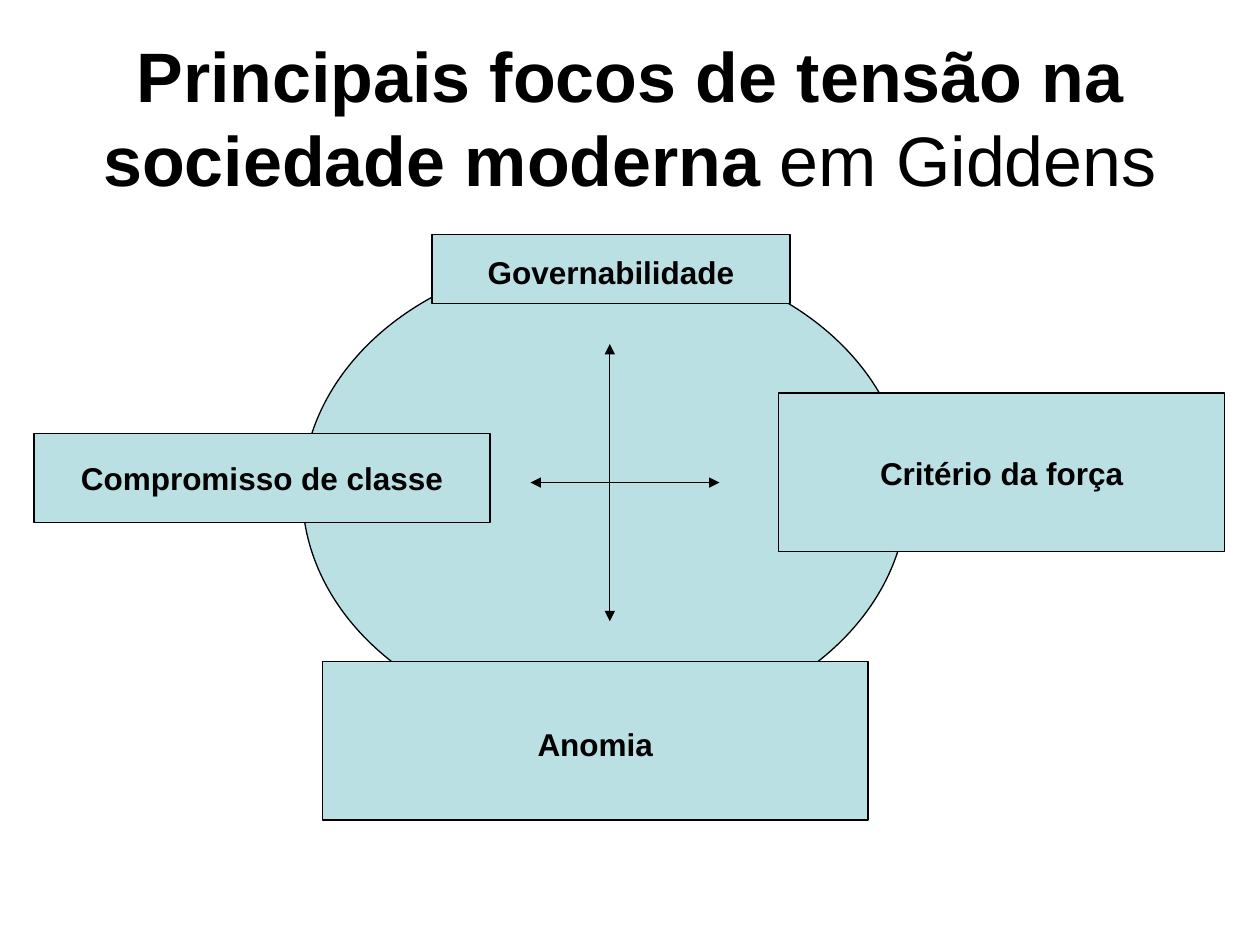
from typing import NamedTuple

import pptx
import pptx.dml.color
import pptx.enum.shapes
import pptx.enum.text
import pptx.oxml.ns
import pptx.util
from lxml import etree
from pptx.util import Inches

BLACK = pptx.dml.color.RGBColor(0x00, 0x00, 0x00)
PALE_TEAL = pptx.dml.color.RGBColor(0xBB, 0xE0, 0xE3)
FONT = "Arial"
OUTLINE = pptx.util.Pt(0.75)
SHAPES = pptx.enum.shapes.MSO_SHAPE


class Tension(NamedTuple):
    label: str
    left: float
    top: float
    width: float
    height: float
    drop: float = 0  # extra top inset that lowers the label


TENSIONS = [
    Tension("Anomia", 2.56, 5.25, 4.33, 1.26, 0.05),
    Tension("Compromisso de classe", 0.27, 3.44, 3.62, 0.71),
    Tension("Governabilidade", 3.43, 1.86, 2.84, 0.55, 0.05),
    Tension("Critério da força", 6.18, 3.12, 3.54, 1.26),
]
HUB = (4.84, 3.83)
ARROW_TIPS = [(4.84, 4.93), (4.84, 2.73), (5.71, 3.83), (4.21, 3.83)]


def add_run(paragraph, text: str, size: float, bold: bool) -> None:
    run = paragraph.add_run()
    run.text = text
    run.font.name = FONT
    run.font.size = pptx.util.Pt(size)
    run.font.bold = bold
    run.font.color.rgb = BLACK


def center_text(frame, wrap: bool):
    frame.word_wrap = wrap
    frame.vertical_anchor = pptx.enum.text.MSO_ANCHOR.MIDDLE
    paragraph = frame.paragraphs[0]
    paragraph.alignment = pptx.enum.text.PP_ALIGN.CENTER
    return paragraph


def add_outlined(slide, kind, left: float, top: float, width: float, height: float):
    shape = slide.shapes.add_shape(
        kind, Inches(left), Inches(top), Inches(width), Inches(height))
    shape.shadow.inherit = False
    shape.fill.solid()
    shape.fill.fore_color.rgb = PALE_TEAL
    shape.line.color.rgb = BLACK
    shape.line.width = OUTLINE
    return shape


def add_tension(slide, tension: Tension) -> None:
    box = add_outlined(slide, SHAPES.RECTANGLE, tension.left, tension.top,
                       tension.width, tension.height)
    box.text_frame.margin_top = Inches(0.05 + tension.drop)
    add_run(center_text(box.text_frame, wrap=False), tension.label, 18, True)


def add_arrow(slide, start: tuple[float, float], tip: tuple[float, float]) -> None:
    arrow = slide.shapes.add_connector(
        pptx.enum.shapes.MSO_CONNECTOR.STRAIGHT,
        *(Inches(value) for value in start + tip))
    arrow.line.color.rgb = BLACK
    arrow.line.width = OUTLINE
    qn = pptx.oxml.ns.qn
    etree.SubElement(arrow.line._get_or_add_ln(), qn("a:tailEnd"), type="triangle")
    etree.SubElement(arrow._element.spPr, qn("a:effectLst"))


def main() -> None:
    presentation = pptx.Presentation()
    presentation.slide_width = Inches(10)
    presentation.slide_height = Inches(7.5)
    slide = presentation.slides.add_slide(presentation.slide_layouts[6])

    # Society, behind everything else
    add_outlined(slide, SHAPES.OVAL, 2.4, 2.02, 4.8, 3.78)

    # Title
    title = slide.shapes.add_textbox(Inches(0.5), Inches(0.3), Inches(9), Inches(1.25))
    heading = center_text(title.text_frame, wrap=True)
    add_run(heading, "Principais focos de tensão na sociedade moderna ", 40, True)
    add_run(heading, "em Giddens", 40, False)

    # Tensions around the circle
    for tension in TENSIONS:
        add_tension(slide, tension)

    # Arrows from the hub towards each tension
    for tip in ARROW_TIPS:
        add_arrow(slide, HUB, tip)

    presentation.save("out.pptx")


if __name__ == "__main__":
    main()
